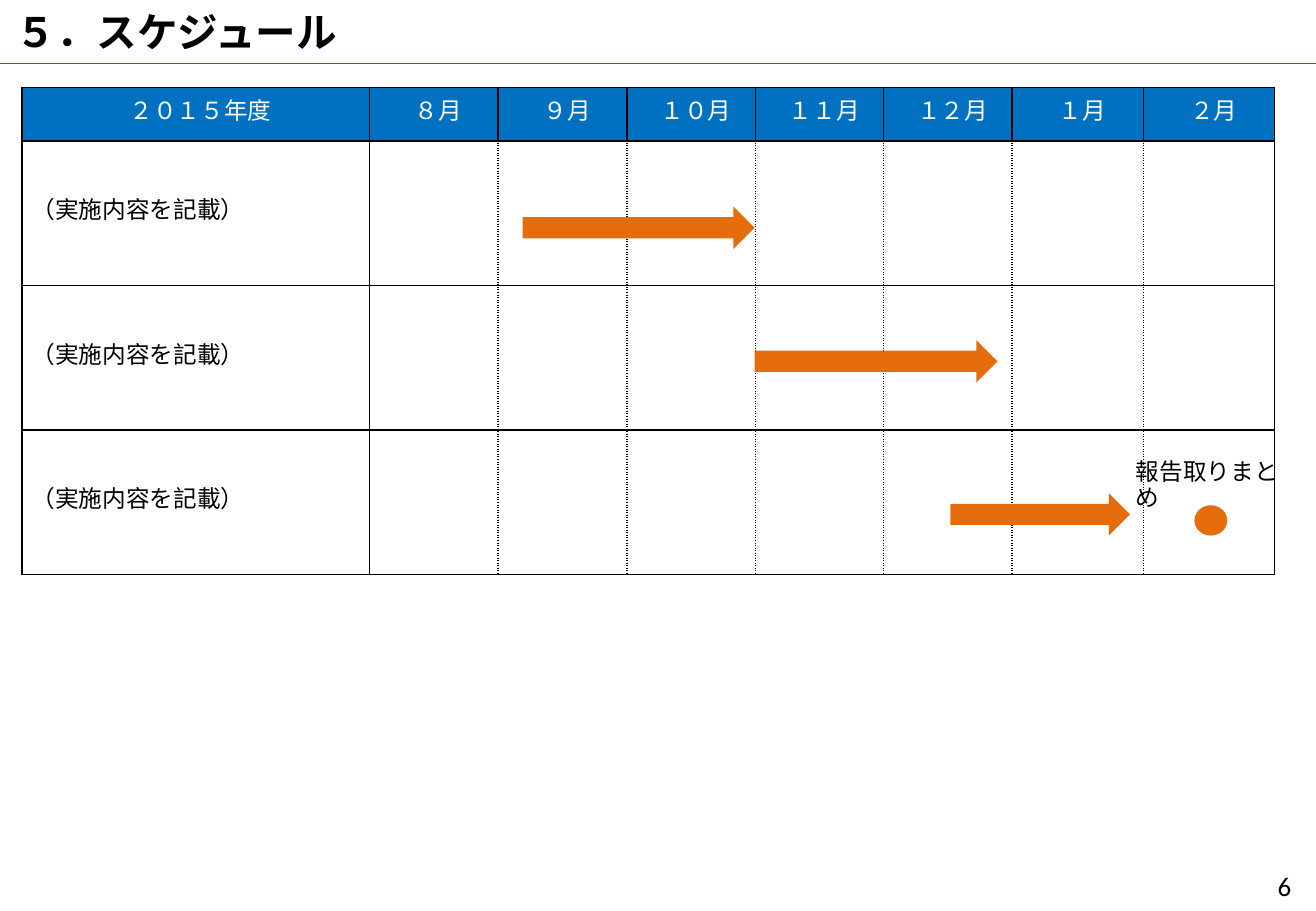
from dataclasses import dataclass

from lxml.etree import SubElement
from pptx import Presentation
from pptx.dml.color import RGBColor
from pptx.enum.shapes import MSO_CONNECTOR, MSO_SHAPE
from pptx.enum.text import MSO_ANCHOR, PP_ALIGN
from pptx.oxml.ns import qn
from pptx.util import Inches, Pt


@dataclass(frozen=True)
class Theme:
    black: str = "000000"
    white: str = "FFFFFF"
    blue: str = "0070C0"
    orange: str = "E46C0A"
    font: str = "Noto Sans CJK JP"
    number_font: str = "Calibri"
    title: int = 24
    number: int = 16
    body: int = 14


THEME = Theme()

MONTHS = ["８月", "９月", "１０月", "１１月", "１２月", "１月", "２月"]
TASKS = ["（実施内容を記載）"] * 3
COL_WIDTHS = [2.86, 1.06, 1.06, 1.06, 1.05, 1.06, 1.08, 1.08]
HEADER_HEIGHT, TASK_HEIGHT = 0.44, 1.19
ARROWS = [(4.3, 1.7, 1.91), (6.21, 2.8, 2), (7.82, 4.06, 1.48)]


def set_text(p, text, size, color=THEME.black, font=THEME.font, bold=False,
             align=PP_ALIGN.LEFT, spacing=None):
    p.add_run().text = text
    p.alignment = align
    if spacing:
        p.line_spacing = Pt(spacing)
    p.font.size = Pt(size)
    p.font.bold = bold
    p.font.name = font
    p.font.color.rgb = RGBColor.from_string(color)
    # East Asian typeface
    props = p._p.pPr.find(qn("a:defRPr"))
    SubElement(props, qn("a:ea")).set("typeface", font)


def add_text(s, box, text, size, anchor=MSO_ANCHOR.TOP, wrap=True, **style):
    tf = s.shapes.add_textbox(*map(Inches, box)).text_frame
    tf.word_wrap = wrap
    tf.vertical_anchor = anchor
    set_text(tf.paragraphs[0], text, size, **style)


def add_mark(s, kind, box):
    sp = s.shapes.add_shape(kind, *map(Inches, box))
    sp.shadow.inherit = False
    sp.fill.solid()
    sp.fill.fore_color.rgb = RGBColor.from_string(THEME.orange)
    sp.line.fill.background()


def add_rule(s, y, width):
    line = s.shapes.add_connector(MSO_CONNECTOR.STRAIGHT, 0, Inches(y), Inches(width), Inches(y))
    line.line.color.rgb = RGBColor.from_string(THEME.blue)
    line.line.width = Pt(0.75)
    SubElement(line._element.spPr, qn("a:effectLst"))


def set_borders(cell, dotted):
    """Draw all four sides; those named in dotted are dotted."""
    props = cell._tc.get_or_add_tcPr()
    for i, side in enumerate("LRTB"):
        ln = props.makeelement(qn(f"a:ln{side}"), {"w": str(Pt(1))})
        fill = SubElement(ln, qn("a:solidFill"))
        SubElement(fill, qn("a:srgbClr")).set("val", THEME.black)
        dash = "sysDot" if side in dotted else "solid"
        SubElement(ln, qn("a:prstDash")).set("val", dash)
        props.insert(i, ln)


def format_cell(cell, is_header, dotted):
    cell.vertical_anchor = MSO_ANCHOR.MIDDLE
    cell.margin_left, cell.margin_right = Inches(0.08), 0
    cell.margin_top = cell.margin_bottom = Inches(0.05 if is_header else 0.08)
    if is_header:
        cell.fill.solid()
        cell.fill.fore_color.rgb = RGBColor.from_string(THEME.blue)
    else:
        cell.fill.background()
    set_borders(cell, dotted)


def add_schedule(s):
    rows = [["２０１５年度", *MONTHS]] + [[task] + [""] * len(MONTHS) for task in TASKS]
    heights = [HEADER_HEIGHT] + [TASK_HEIGHT] * len(TASKS)
    frame = s.shapes.add_table(len(rows), len(COL_WIDTHS), Inches(0.18), Inches(0.72),
                               Inches(sum(COL_WIDTHS)), Inches(sum(heights)))
    table = frame.table
    table.first_row = table.horz_banding = False
    for column, width in zip(table.columns, COL_WIDTHS):
        column.width = Inches(width)
    for r, (texts, height) in enumerate(zip(rows, heights)):
        table.rows[r].height = Inches(height)
        for c, text in enumerate(texts):
            cell = table.cell(r, c)
            # Only the lines between months are dotted
            dotted = ""
            if r > 0 and c > 0:
                dotted = ("L" if c > 1 else "") + ("R" if c < len(MONTHS) else "")
            format_cell(cell, r == 0, dotted)
            if text:
                set_text(cell.text_frame.paragraphs[0], text, THEME.body,
                         color=THEME.white if r == 0 else THEME.black,
                         align=PP_ALIGN.CENTER if r == 0 else PP_ALIGN.LEFT,
                         spacing=14 if r == 0 else 15)


def main():
    prs = Presentation()
    prs.slide_width, prs.slide_height = Inches(10.83), Inches(7.5)
    s = prs.slides.add_slide(prs.slide_layouts[6])

    # Heading and page number
    add_text(s, (0.03, 0, 10, 0.52), "５．スケジュール", THEME.title,
             anchor=MSO_ANCHOR.MIDDLE, bold=True)
    add_rule(s, 0.52, 10.83)
    add_text(s, (10.31, 7.11, 0.52, 0.37), "6", THEME.number, anchor=MSO_ANCHOR.MIDDLE,
             wrap=False, font=THEME.number_font, align=PP_ALIGN.CENTER)

    # Schedule grid
    add_schedule(s)

    # Task periods and final milestone
    for left, top, width in ARROWS:
        add_mark(s, MSO_SHAPE.RIGHT_ARROW, (left, top, width, 0.35))
    add_mark(s, MSO_SHAPE.OVAL, (9.83, 4.16, 0.27, 0.25))
    add_text(s, (9.25, 3.74, 1.43, 0.31), "報告取りまとめ", THEME.body, spacing=15)

    prs.save("out.pptx")


if __name__ == "__main__":
    main()
